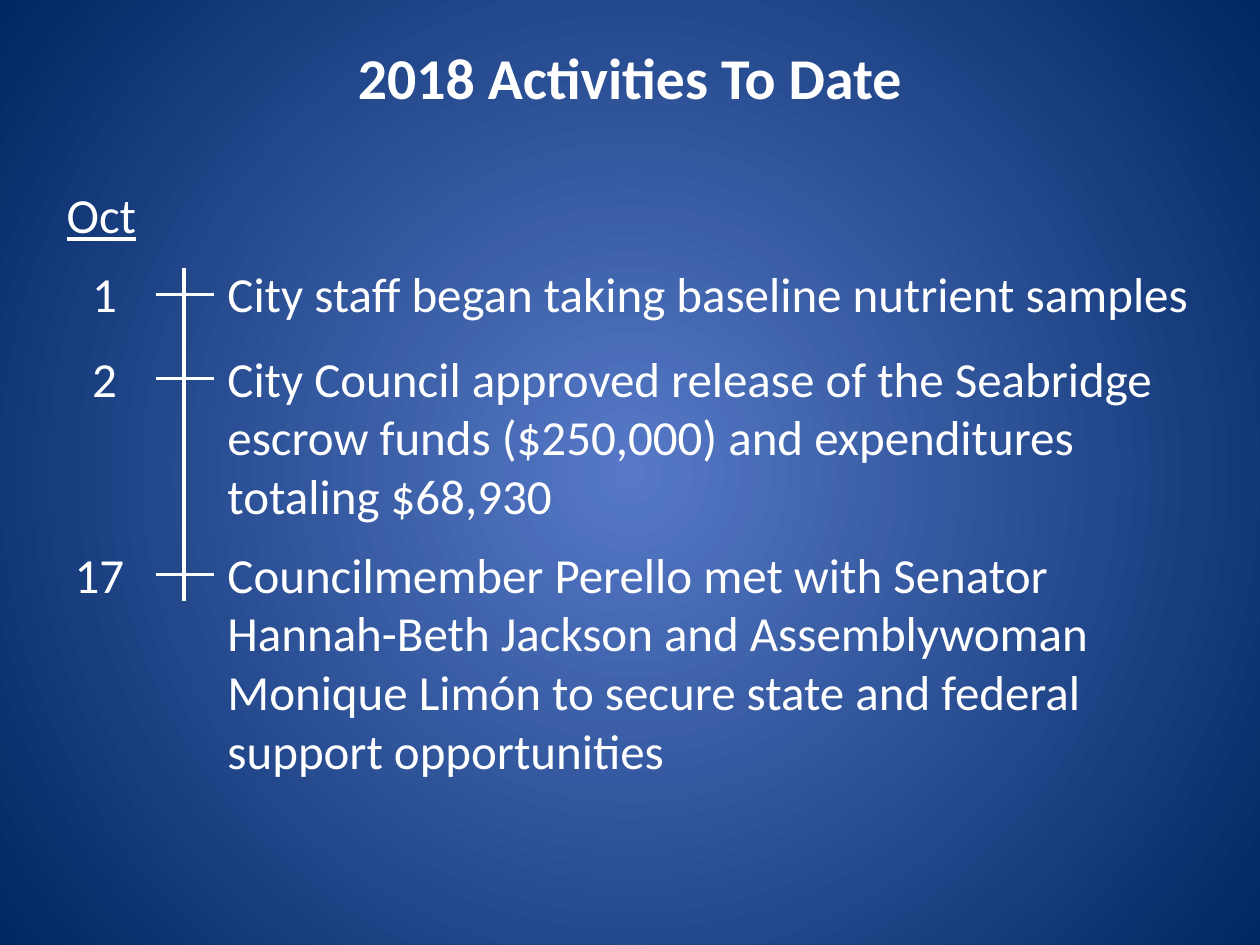
from pptx import Presentation
from pptx.dml.color import RGBColor
from pptx.enum.shapes import MSO_CONNECTOR
from pptx.enum.text import MSO_ANCHOR, PP_ALIGN
from pptx.oxml import parse_xml
from pptx.oxml.ns import nsdecls, qn
from pptx.util import Pt


def color(code):
    return RGBColor.from_string(code)


def write(frame, text, size=28, font="Calibri", ink="FFFFFF", bold=False,
          under=False, align=PP_ALIGN.LEFT):
    par = frame.paragraphs[0]
    par.alignment = align
    run = par.add_run()
    run.text = text
    face = run.font
    face.name, face.size = font, Pt(size)
    face.bold, face.underline = bold, under
    face.color.rgb = color(ink)


class Deck:
    ink = "FFFFFF"
    core = "5779C7"
    edge = "002763"

    def __init__(self, slide):
        self.slide = slide

    def glow(self):
        """Fill the background with a gradient that spreads from the centre."""
        fill = self.slide.background.fill
        fill.gradient()
        for stop, code, place in zip(fill.gradient_stops,
                                     (self.core, self.edge), (0, 1)):
            stop.color.rgb = color(code)
            stop.position = place
        grad = next(self.slide.element.iter(qn("a:gradFill")))
        lin = grad.find(qn("a:lin"))
        grad.replace(lin, parse_xml(
            f'<a:path {nsdecls("a")} path="circle"><a:fillToRect '
            'l="50000" t="50000" r="50000" b="50000"/></a:path>'))

    def text(self, words, left, top, width, height, pad=(3, 3),
             anchor=MSO_ANCHOR.TOP, **style):
        box = self.slide.shapes.add_textbox(
            Pt(left), Pt(top), Pt(width), Pt(height))
        frame = box.text_frame
        frame.word_wrap = True
        frame.vertical_anchor = anchor
        frame.margin_left = frame.margin_right = Pt(pad[0])
        frame.margin_top = frame.margin_bottom = Pt(pad[1])
        write(frame, words, ink=self.ink, **style)

    def line(self, x1, y1, x2, y2):
        rule = self.slide.shapes.add_connector(
            MSO_CONNECTOR.STRAIGHT, Pt(x1), Pt(y1), Pt(x2), Pt(y2))
        rule.line.color.rgb = color(self.ink)
        rule.line.width = Pt(2)
        rule.element.spPr.append(parse_xml(f'<a:effectLst {nsdecls("a")}/>'))

    def event(self, day, words, top, height):
        """Add a date, its tick on the time line and its entry."""
        self.text(day, 49.7 if len(day) == 1 else 39.6, top, 36, 28)
        self.line(89, top + 20.5, 122.4, top + 20.5)
        self.text(words, 127, top, 563, height)


EVENTS = [
    ("1", "City staff began taking baseline nutrient samples", 147.8, 45),
    ("2", "City Council approved release of the Seabridge escrow funds "
          "($250,000) and expenditures totaling $68,930", 195.9, 78),
    ("17", "Councilmember Perello met with Senator Hannah-Beth Jackson and "
           "Assemblywoman Monique Limón to secure state and federal support "
           "opportunities", 307.9, 158),
]


def main():
    show = Presentation()
    show.slide_width, show.slide_height = Pt(720), Pt(540)
    deck = Deck(show.slides.add_slide(show.slide_layouts[6]))
    deck.glow()
    deck.text("2018 Activities To Date", 36, 20, 648, 47, pad=(7.2, 3.6),
              anchor=MSO_ANCHOR.MIDDLE, size=33, bold=True,
              align=PP_ALIGN.CENTER)
    deck.text("Oct", 31, 102.2, 58, 41, pad=(7.2, 3.6), under=True)
    deck.line(105, 153.4, 105, 343.4)
    for event in EVENTS:
        deck.event(*event)
    show.save("out.pptx")


if __name__ == "__main__":
    main()
